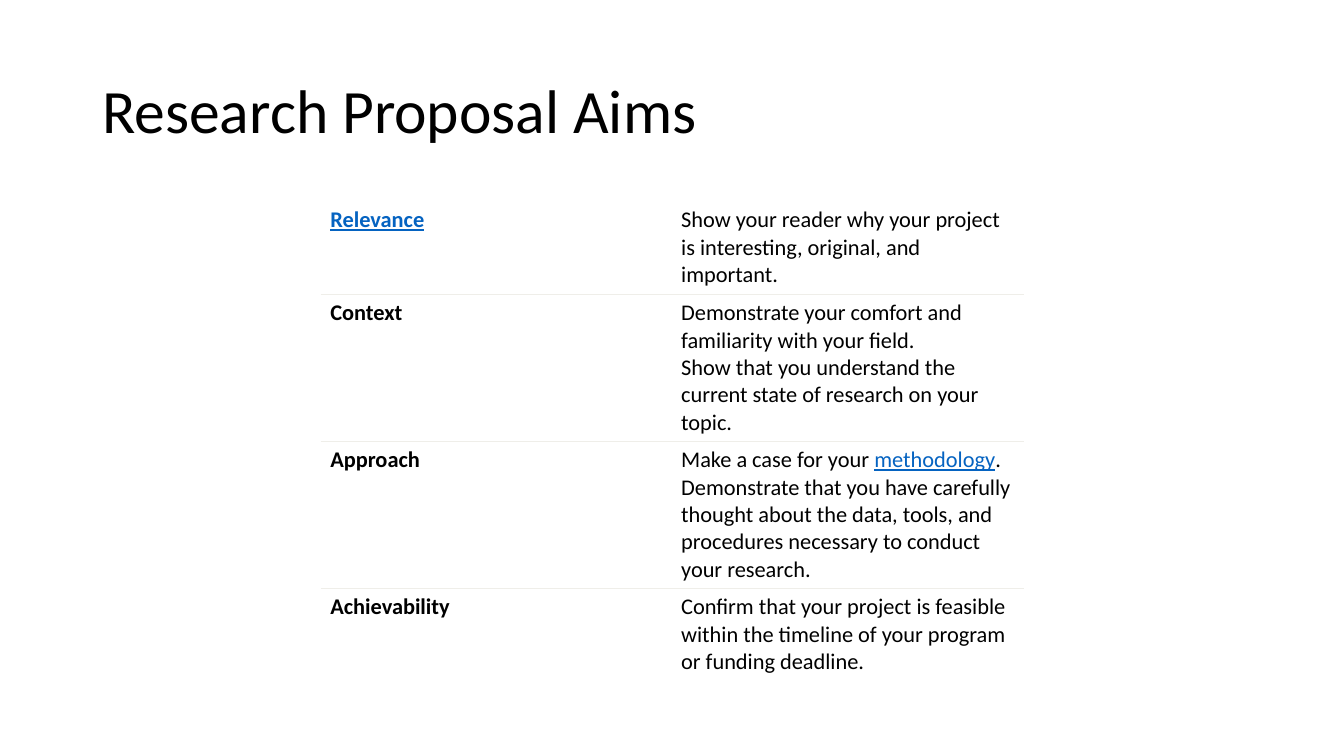
import pptx
import pptx.dml.color
import pptx.enum.text
import pptx.oxml
import pptx.oxml.ns
import pptx.util

Pt = pptx.util.Pt
BLACK = pptx.dml.color.RGBColor(0x00, 0x00, 0x00)
WHITE = pptx.dml.color.RGBColor(0xFF, 0xFF, 0xFF)
BLUE = pptx.dml.color.RGBColor(0x05, 0x63, 0xC1)
GRAY = pptx.dml.color.RGBColor(0xEF, 0xEE, 0xE9)

LINK = {"color": BLUE, "under": True}
# Each row: height, label, label format, pieces of the detail text
AIMS = [
    (66.24, "Relevance", LINK,
     [("Show your reader why your project is interesting, original, and important.", {})]),
    (105.12, "Context", {},
     [("Demonstrate your comfort and familiarity with your field.\n"
       "Show that you understand the current state of research on your topic.", {})]),
    (105.12, "Approach", {},
     [("Make a case for your ", {}),
      ("methodology", LINK),
      (".\nDemonstrate that you have carefully thought about the data, tools, "
       "and procedures necessary to conduct your research.", {})]),
    (66.24, "Achievability", {},
     [("Confirm that your project is feasible within the timeline of your "
       "program or funding deadline.", {})]),
]


def write(para, text, size=16, color=BLACK, bold=False, under=False):
    """Add text to a paragraph, with a line break at each newline."""
    for i, line in enumerate(text.split("\n")):
        if i:
            para.add_line_break()
        run = para.add_run()
        run.text = line
        font = run.font
        font.name = "Calibri"
        font.size = Pt(size)
        font.color.rgb = color
        font.bold = bold
        font.underline = under


def add_title(slide, text):
    box = slide.shapes.add_textbox(Pt(66), Pt(28.75), Pt(828), Pt(104.4))
    frame = box.text_frame
    frame.word_wrap = True
    frame.vertical_anchor = pptx.enum.text.MSO_ANCHOR.MIDDLE
    para = frame.paragraphs[0]
    para.line_spacing = 0.9
    write(para, text, size=44)


def add_edge(cell, side):
    """Draw a thin rule on one side of a cell: T or B."""
    edge = pptx.oxml.parse_xml(
        f'<a:ln{side} {pptx.oxml.ns.nsdecls("a")} w="{Pt(0.75)}">'
        f'<a:solidFill><a:srgbClr val="{GRAY}"/></a:solidFill></a:ln{side}>')
    cell._tc.get_or_add_tcPr().append(edge)


def fill_cell(cell, parts, sides):
    cell.margin_left = cell.margin_right = Pt(6.5)
    cell.margin_top = cell.margin_bottom = Pt(3.6)
    for side in sides:
        add_edge(cell, side)
    cell.fill.solid()
    cell.fill.fore_color.rgb = WHITE
    para = cell.text_frame.paragraphs[0]
    for text, style in parts:
        write(para, text, **style)


def add_aims(slide):
    high = sum(aim[0] for aim in AIMS)
    table = slide.shapes.add_table(
        len(AIMS), 2, Pt(229.5), Pt(144), Pt(501.2), Pt(high)).table
    table.first_row = table.horz_banding = False
    for col in table.columns:
        col.width = Pt(250.6)
    last = len(AIMS) - 1
    for i, (height, label, style, parts) in enumerate(AIMS):
        table.rows[i].height = Pt(height)
        sides = ("T" if i > 0 else "") + ("B" if i < last else "")
        fill_cell(table.cell(i, 0), [(label, {**style, "bold": True})], sides)
        fill_cell(table.cell(i, 1), parts, sides)


def main():
    deck = pptx.Presentation()
    deck.slide_width, deck.slide_height = Pt(960), Pt(540)
    slide = deck.slides.add_slide(deck.slide_layouts[6])
    add_title(slide, "Research Proposal Aims")
    add_aims(slide)
    deck.save("out.pptx")


if __name__ == "__main__":
    main()
